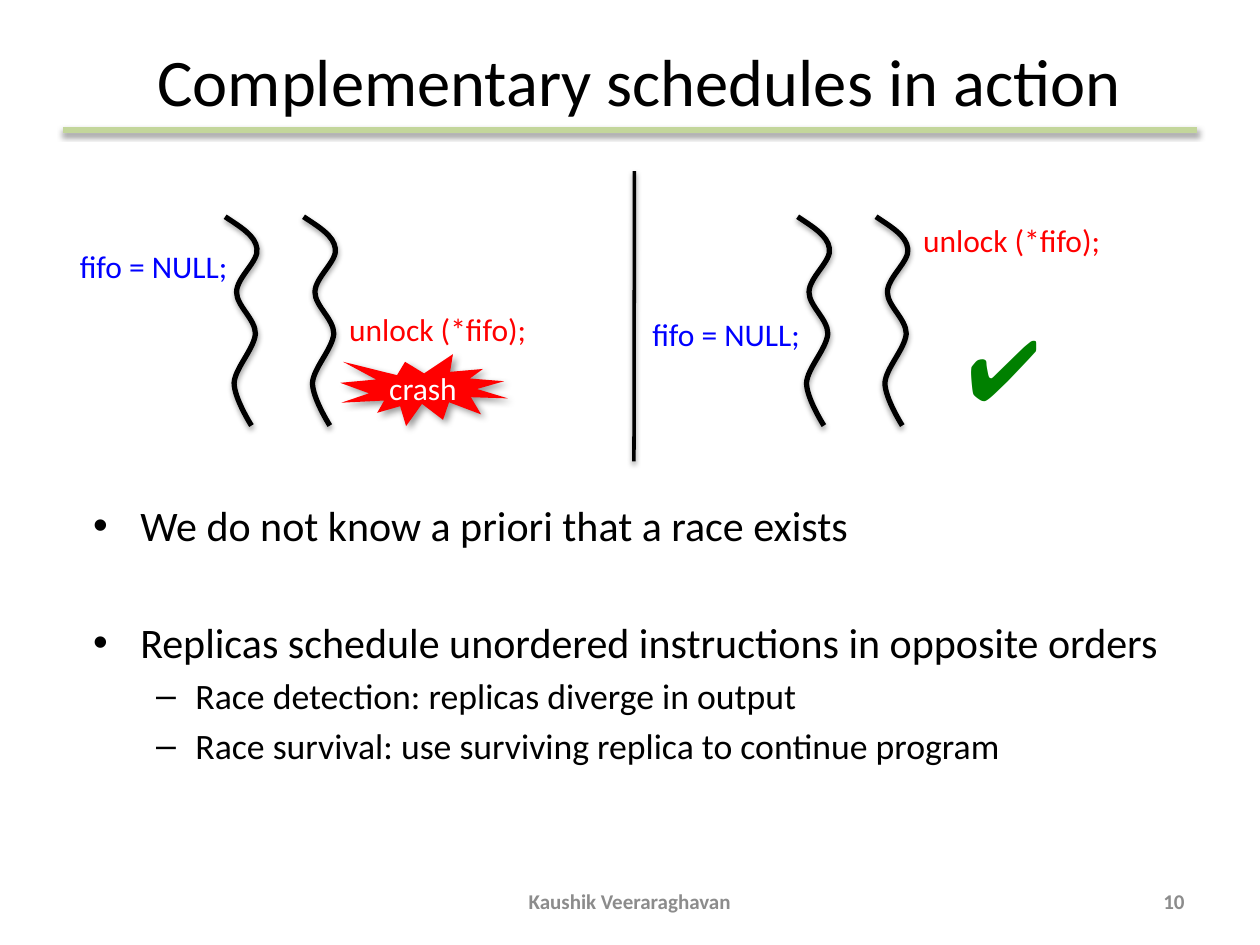
import pptx
import pptx.dml.color
import pptx.enum.shapes
import pptx.enum.text
import pptx.oxml.ns
import pptx.util
from lxml import etree

Cm = pptx.util.Cm
Pt = pptx.util.Pt
qn = pptx.oxml.ns.qn
ALIGN = pptx.enum.text.PP_ALIGN
ANCHOR = pptx.enum.text.MSO_ANCHOR

COLORS = {
    "ink": "000000",
    "rule": "C3D69B",
    "unlock": "FF0000",
    "assign": "0000FF",
    "success": "008000",
    "crash_text": "FFFFFF",
    "footer": "8C8C8C",
}

WAVE = [
    (0.3, 0.2), (0.61, 0.38), (0.64, 0.64),
    (0.69, 0.89), (0.23, 1.22), (0.23, 1.52),
    (0.23, 1.8), (0.61, 2.06), (0.61, 2.36),
    (0.58, 2.67), (0.2, 3.05), (0.18, 3.35),
    (0.18, 3.66), (0.53, 4.21), (0.53, 4.21),
]
THREAD_TOP = 4.37
THREAD_GAP = 1.58

POINTS = [
    ("We do not know a priori that a race exists", 0, 0),
    ("Replicas schedule unordered instructions in opposite orders", 0, 38),
    ("Race detection: replicas diverge in output", 1, 4),
    ("Race survival: use surviving replica to continue program", 1, 4),
]
LEVELS = [("•", 24, 0.95, -0.95), ("–", 20.4, 2.06, -0.79)]


def rgb(name):
    """Return the named colour."""
    return pptx.dml.color.RGBColor.from_string(COLORS[name])


def add_child(parent, tag, **attributes):
    """Append a DrawingML element and return it."""
    values = {key: str(value) for key, value in attributes.items()}
    return etree.SubElement(parent, qn(tag), values)


def cast_shadow(shape, blur=3.1, distance=1.6, angle=90, opacity=38):
    """Give a shape a soft black outer shadow."""
    effects = add_child(shape._element.spPr, "a:effectLst")
    outer = add_child(effects, "a:outerShdw", blurRad=Pt(blur), dist=Pt(distance),
                      dir=angle * 60000, rotWithShape=0)
    color = add_child(outer, "a:srgbClr", val=COLORS["ink"])
    add_child(color, "a:alpha", val=opacity * 1000)


def write_text(paragraph, text, size=18, color="ink", font="Calibri", bold=False,
               align=ALIGN.LEFT):
    """Write one formatted run into a paragraph."""
    paragraph.alignment = align
    run = paragraph.add_run()
    run.text = text
    run.font.size = Pt(size)
    run.font.name = font
    run.font.bold = bold
    run.font.color.rgb = rgb(color)


def add_label(slide, text, left, top, width, height=1.02, anchor=ANCHOR.TOP, wrap=False,
              **text_format):
    """Add a text box with a single line."""
    frame = slide.shapes.add_textbox(Cm(left), Cm(top), Cm(width), Cm(height)).text_frame
    frame.word_wrap = wrap
    frame.vertical_anchor = anchor
    write_text(frame.paragraphs[0], text, **text_format)


def add_line(slide, start, end, color, width):
    """Add a straight shadowed line."""
    line = slide.shapes.add_connector(pptx.enum.shapes.MSO_CONNECTOR.STRAIGHT,
                                      *(Cm(value) for value in start + end))
    line.line.color.rgb = rgb(color)
    line.line.width = Pt(width)
    cast_shadow(line)


def round_segments(freeform):
    """Turn each three straight segments into one cubic curve."""
    segments = list(freeform._element.iter(qn("a:lnTo")))
    outline = segments[0].getparent()
    for first in range(0, len(segments), 3):
        curve = add_child(outline, "a:cubicBezTo")
        for segment in segments[first:first + 3]:
            curve.append(segment[0])
            outline.remove(segment)


def add_thread(slide, left):
    """Draw one wavy thread of execution."""
    builder = slide.shapes.build_freeform(Cm(left), Cm(THREAD_TOP))
    builder.add_line_segments([(Cm(left + x), Cm(THREAD_TOP + y)) for x, y in WAVE],
                              close=False)
    thread = builder.convert_to_shape()
    round_segments(thread)
    thread.fill.background()
    thread.line.color.rgb = rgb("ink")
    thread.line.width = Pt(3)
    cast_shadow(thread)


def add_schedule(slide, left, assign_top, unlock_left, unlock_top):
    """Draw a pair of threads with their two instructions."""
    for index in range(2):
        add_thread(slide, left + index * THREAD_GAP)
    add_label(slide, "fifo = NULL;", left - 3.18, assign_top, 3.53, color="assign")
    add_label(slide, "unlock (*fifo);", unlock_left, unlock_top, 4.11, color="unlock")


def add_crash(slide):
    """Add the crash burst."""
    burst = slide.shapes.add_shape(pptx.enum.shapes.MSO_SHAPE.EXPLOSION1,
                                   Cm(6.86), Cm(7.14), Cm(3.38), Cm(1.45))
    burst.fill.solid()
    burst.fill.fore_color.rgb = rgb("unlock")
    burst.line.fill.background()
    cast_shadow(burst, blur=4, distance=3, angle=45, opacity=40)
    frame = burst.text_frame
    frame.word_wrap = False
    frame.vertical_anchor = ANCHOR.MIDDLE
    write_text(frame.paragraphs[0], "crash", color="crash_text", align=ALIGN.CENTER)


def add_title(slide, text):
    """Place and format the title."""
    title = slide.shapes.title
    title.left, title.top, title.width, title.height = Cm(0.38), Cm(0.78), Cm(25.02), Cm(1.68)
    title.text_frame.vertical_anchor = ANCHOR.MIDDLE
    write_text(title.text_frame.paragraphs[0], text, size=38, align=ALIGN.CENTER)


def add_points(slide):
    """Add the two-level bullet list."""
    frame = slide.shapes.add_textbox(Cm(1.63), Cm(9.95), Cm(22.43), Cm(6.25)).text_frame
    frame.word_wrap = True
    for index, (text, level, space) in enumerate(POINTS):
        paragraph = frame.add_paragraph() if index else frame.paragraphs[0]
        bullet, size, margin, indent = LEVELS[level]
        paragraph.level = level
        properties = paragraph._p.get_or_add_pPr()
        properties.set("marL", str(Cm(margin)))
        properties.set("indent", str(Cm(indent)))
        add_child(properties, "a:buFont", typeface="Arial")
        add_child(properties, "a:buChar", char=bullet)
        paragraph.space_before = Pt(space)
        write_text(paragraph, text, size=size)


def main():
    """Build and save the slide."""
    deck = pptx.Presentation()
    deck.slide_width, deck.slide_height = Cm(25.4), Cm(19.05)
    slide = deck.slides.add_slide(deck.slide_layouts[5])
    add_line(slide, (1.27, 2.62), (24.13, 2.62), "rule", 3.5)
    add_title(slide, "Complementary schedules in action")
    add_points(slide)
    footer = dict(wrap=True, anchor=ANCHOR.MIDDLE, size=12, color="footer", bold=True)
    add_label(slide, "Kaushik Veeraraghavan", 8.67, 17.65, 8.05, align=ALIGN.CENTER, **footer)
    add_label(slide, "10", 18.21, 17.65, 5.92, align=ALIGN.RIGHT, **footer)
    add_line(slide, (12.79, 3.45), (12.78, 9.3), "ink", 2)
    add_schedule(slide, 4.54, 4.85, 6.79, 6.12)
    add_schedule(slide, 16.08, 6.22, 18.36, 4.33)
    add_crash(slide)
    add_label(slide, "✔", 19.25, 6.25, 1.96, 2.31, size=48, color="success", font="Arial")
    deck.save("out.pptx")


if __name__ == "__main__":
    main()
